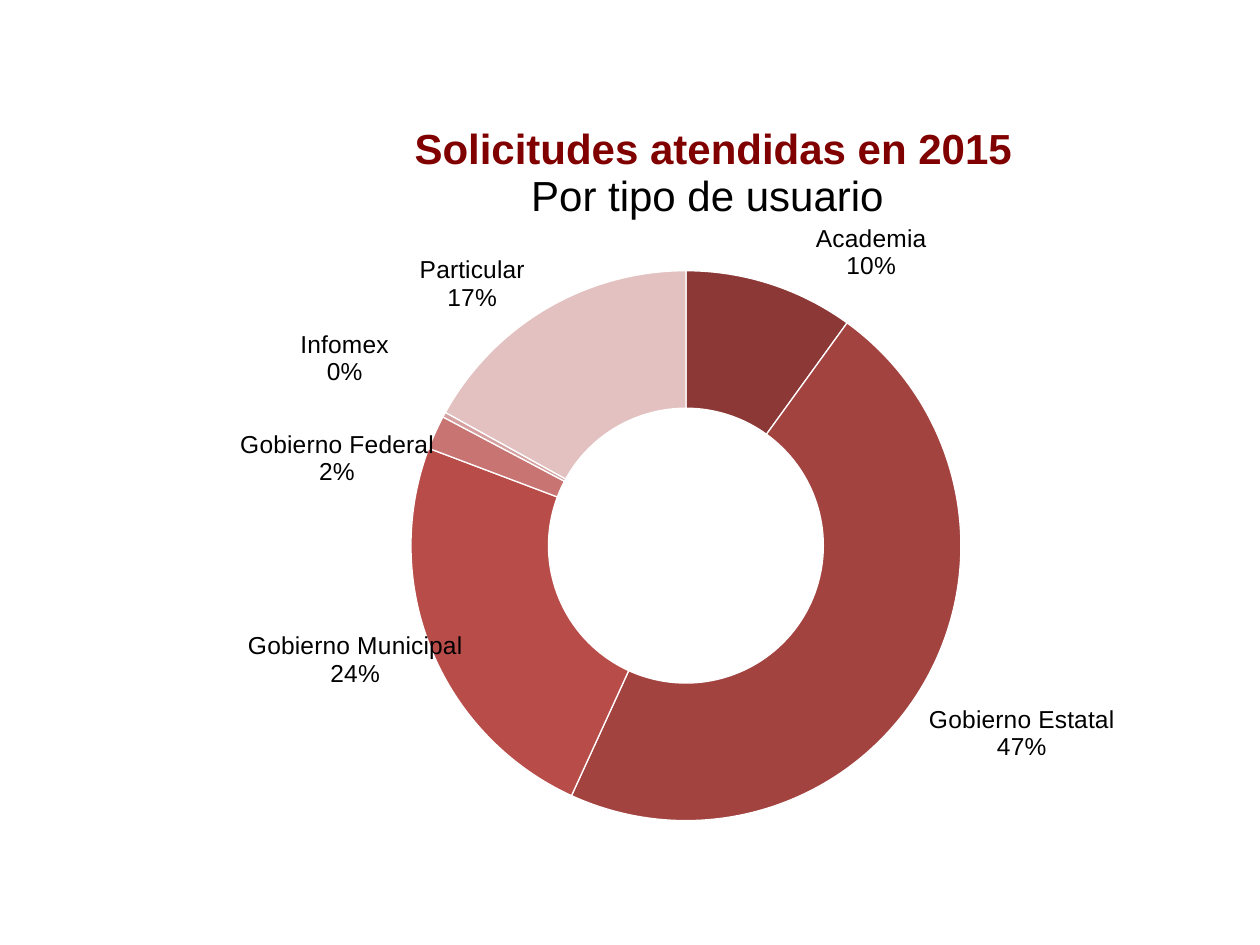
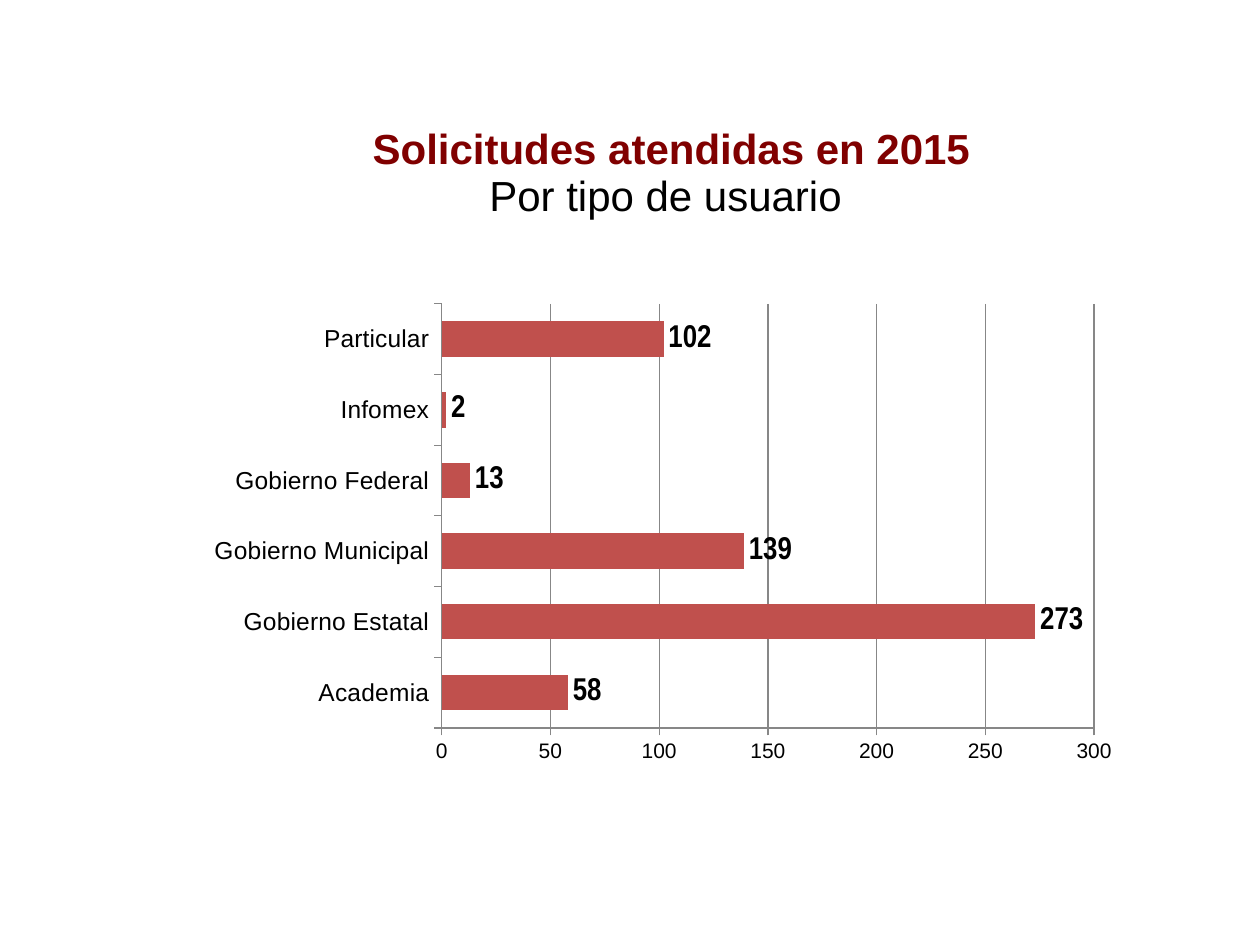
"""Build two slides of charts on the requests served in 2015."""
import copy
import math

import pptx
import pptx.chart.data
import pptx.dml.color
import pptx.enum.chart
import pptx.oxml
import pptx.oxml.ns
import pptx.util

SCALE = 914400 / 126
HUES = {
    "title": "800000", "text": "000000", "bar": "C0504D", "axis": "878787",
    "edge": "FFFFFF",
}
SHADES = ["8C3836", "A24340", "B84C49", "C87472", "D5A09F", "E2C1C0"]
USERS = ["Academia", "Gobierno Estatal", "Gobierno Municipal",
         "Gobierno Federal", "Infomex", "Particular"]
SHARES = [10, 47, 24, 2, 0.3, 17]
COUNTS = [58, 273, 139, 13, 2, 102]
SPOTS = [(871, 253), (1022, 734), (355, 660), (337, 459), (345, 359), (472, 284)]
LEFT, TOP, WIDTH = 184, 120, 999
RING = {"x": 411, "y": 271, "size": 550}
KIND = pptx.enum.chart.XL_CHART_TYPE


def px(size):
    """Turn pixels into EMU."""
    return pptx.util.Emu(round(size * SCALE))


def hue(code):
    """Turn a hex string into a colour."""
    return pptx.dml.color.RGBColor.from_string(code)


def style(font, size, bold=False, name="Arial", color="text"):
    """Set size, weight, face and colour of a font."""
    font.size, font.bold, font.name = pptx.util.Pt(size), bold, name
    font.color.rgb = hue(HUES[color])


def draw(line, code, width=0.75):
    """Set colour and width of a line."""
    line.color.rgb = hue(code)
    line.width = pptx.util.Pt(width)


def node(tag, val=None):
    """Make a chart element, with a value if one is given."""
    item = pptx.oxml.parse_xml(f"<{tag} {pptx.oxml.ns.nsdecls('c')}/>")
    if val is not None:
        item.set("val", str(val))
    return item


def place(owner, index, modes, **parts):
    """Give a chart part a manual layout in fractions of the chart."""
    for old in owner.xpath("c:layout"):
        owner.remove(old)
    layout, manual = node("c:layout"), node("c:manualLayout")
    layout.append(manual)
    for tag, val in modes.items():
        manual.append(node(f"c:{tag}", val))
    for tag, val in parts.items():
        manual.append(node(f"c:{tag}", round(val, 3)))
    owner.insert(index, layout)


def add_chart(slide, kind, values, high, left):
    """Add a chart with the shared heading, which starts at left."""
    data = pptx.chart.data.CategoryChartData()
    data.categories = USERS
    data.add_series("Solicitudes", values)
    box = [px(n) for n in (LEFT, TOP, WIDTH, high)]
    chart = slide.shapes.add_chart(kind, *box, data).chart
    chart.has_legend = False
    style(chart.font, 18, name="Calibri")
    frame = chart.chart_title.text_frame
    frame.text = "Solicitudes atendidas en 2015\nPor tipo de usuario "
    head, sub = frame.paragraphs
    style(head.font, 24, True, color="title")
    style(sub.font, 24)
    place(chart.element.xpath("c:chart/c:title")[0], 1,
          {"xMode": "edge", "yMode": "edge"}, x=(left - LEFT) / WIDTH, y=0)
    return chart


def set_plot(chart, x, y, w, h):
    """Fix the inner plot area of a chart."""
    modes = {"layoutTarget": "inner", "xMode": "edge", "yMode": "edge"}
    place(chart.element.xpath(".//c:plotArea")[0], 0, modes, x=x, y=y, w=w, h=h)


def move_tags(chart, high):
    """Move each ring label from the middle of its slice to its spot."""
    for lead in chart.element.xpath(".//c:showLeaderLines"):
        lead.set("val", "0")
    tags = chart.element.xpath(".//c:ser/c:dLbls")[0]
    gap = node("c:separator")
    gap.text = "\n"
    tags.xpath("c:showBubbleSize")[0].addnext(gap)
    base = [kid for kid in tags if not kid.tag.endswith("showLeaderLines")]
    half = RING["size"] / 2
    mid_x, mid_y = RING["x"] + half, RING["y"] + half
    past = 0
    for i, (share, (x, y)) in enumerate(zip(SHARES, SPOTS)):
        angle = math.tau * (past + share / 2) / sum(SHARES)
        past += share
        tag = node("c:dLbl")
        tag.append(node("c:idx", i))
        for kid in base:
            tag.append(copy.deepcopy(kid))
        place(tag, 1, {},
              x=(x - mid_x - 0.75 * half * math.sin(angle)) / WIDTH,
              y=(y - mid_y + 0.75 * half * math.cos(angle)) / high)
        tags.insert(i, tag)


def add_ring(slide):
    """Add the ring of shares by type of user."""
    high = 718
    chart = add_chart(slide, KIND.DOUGHNUT, SHARES, high, 411)
    set_plot(chart, (RING["x"] - LEFT) / WIDTH, (RING["y"] - TOP) / high,
             RING["size"] / WIDTH, RING["size"] / high)
    row = chart.plots[0].series[0]
    for i, shade in enumerate(SHADES):
        form = row.points[i].format
        form.fill.solid()
        form.fill.fore_color.rgb = hue(shade)
        draw(form.line, HUES["edge"])
    tags = row.data_labels
    tags.show_value = False
    tags.show_category_name = tags.show_percentage = True
    tags.number_format, tags.number_format_is_linked = "0%", False
    style(tags.font, 14)
    move_tags(chart, high)


def add_bars(slide):
    """Add the bars of counts by type of user."""
    chart = add_chart(slide, KIND.BAR_CLUSTERED, COUNTS, 669, 369)
    set_plot(chart, 0.258, 0.275, 0.653, 0.634)
    plot = chart.plots[0]
    plot.gap_width, plot.vary_by_categories = 100, False
    row = plot.series[0]
    row.format.fill.solid()
    row.format.fill.fore_color.rgb = hue(HUES["bar"])
    tags = row.data_labels
    tags.show_value = True
    tags.position = pptx.enum.chart.XL_LABEL_POSITION.OUTSIDE_END
    tags.number_format, tags.number_format_is_linked = "#,##0", False
    style(tags.font, 18, True, "Arial Narrow")
    for axis, size in ((chart.category_axis, 14), (chart.value_axis, 12)):
        axis.major_tick_mark = pptx.enum.chart.XL_TICK_MARK.OUTSIDE
        style(axis.tick_labels.font, size)
        draw(axis.format.line, HUES["axis"])
    axis = chart.value_axis
    axis.minimum_scale, axis.maximum_scale, axis.major_unit = 0, 300, 50
    axis.tick_labels.number_format = "#,##0"
    axis.tick_labels.number_format_is_linked = False
    axis.has_major_gridlines = True
    draw(axis.major_gridlines.format.line, HUES["axis"])


def main():
    """Build both slides and save them."""
    deck = pptx.Presentation()
    deck.slide_width, deck.slide_height = px(1260), px(945)
    for add in (add_ring, add_bars):
        add(deck.slides.add_slide(deck.slide_layouts[6]))
    deck.save("out.pptx")


if __name__ == "__main__":
    main()
